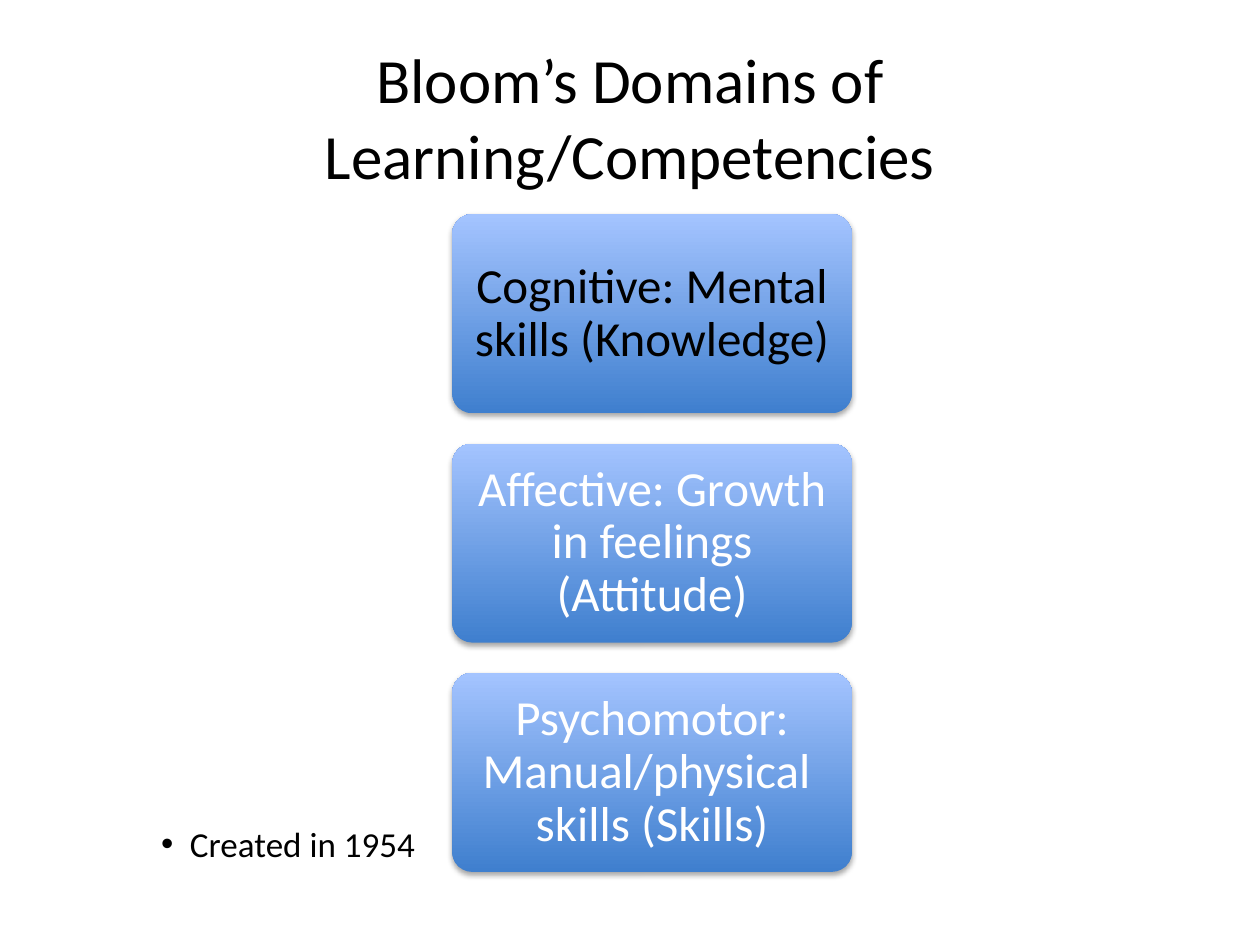
import pptx
import pptx.util
import pptx.dml.color
import pptx.enum.shapes
import pptx.enum.text
import pptx.oxml
import pptx.oxml.ns

COLORS = {"text": "000000", "light": "FFFFFF", "bottom": "3F7FCE", "top": "A4C4FF", "shadow": "000000"}
COLUMNS, ROWS = 100, 75
ALIGN = pptx.enum.text.PP_ALIGN
ANCHOR = pptx.enum.text.MSO_ANCHOR


def rgb(name):
    return pptx.dml.color.RGBColor.from_string(COLORS[name])


def write(frame, text, size, color="text", align=ALIGN.LEFT, anchor=ANCHOR.TOP, spacing=None, inset=None):
    frame.word_wrap = True
    frame.auto_size = pptx.enum.text.MSO_AUTO_SIZE.NONE
    frame.vertical_anchor = anchor
    if inset is not None:
        frame.margin_left = frame.margin_right = pptx.util.Inches(inset)
        frame.margin_top = frame.margin_bottom = pptx.util.Inches(inset)
    para = frame.paragraphs[0]
    para.alignment = align
    para.line_spacing = spacing
    span = para.add_run()
    span.text = text
    span.font.name = "Calibri"
    span.font.size = pptx.util.Pt(size)
    span.font.color.rgb = rgb(color)
    return para


class DomainSlide:
    def __init__(self, deck):
        self.deck = deck
        self.page = deck.slides.add_slide(deck.slide_layouts.get_by_name("Title Only"))

    def place(self, column, row, columns, rows):
        unit_x = self.deck.slide_width / COLUMNS
        unit_y = self.deck.slide_height / ROWS
        return [round(n) for n in (column * unit_x, row * unit_y, columns * unit_x, rows * unit_y)]

    def title(self, text, *area):
        box = self.page.shapes.title
        box.left, box.top, box.width, box.height = self.place(*area)
        write(box.text_frame, text, 36, align=ALIGN.CENTER, anchor=ANCHOR.MIDDLE)

    def card(self, text, color, *area):
        box = self.page.shapes.add_shape(
            pptx.enum.shapes.MSO_SHAPE.ROUNDED_RECTANGLE, *self.place(*area))
        box.adjustments[0] = 0.1
        box.fill.gradient()
        box.fill.gradient_angle = 90
        for stop, name in zip(box.fill.gradient_stops, ("bottom", "top")):
            stop.color.rgb = rgb(name)
        box.line.fill.background()
        self.drop_shadow(box)
        write(box.text_frame, text, 28, color=color, align=ALIGN.CENTER,
              anchor=ANCHOR.MIDDLE, spacing=0.9, inset=0.02)

    def drop_shadow(self, box):
        box.shadow.inherit = False
        effects = box._element.spPr.find(pptx.oxml.ns.qn("a:effectLst"))
        effects.append(pptx.oxml.parse_xml(
            f'<a:outerShdw {pptx.oxml.ns.nsdecls("a")} blurRad="{pptx.util.Pt(3.1)}" '
            f'dist="{pptx.util.Pt(1.8)}" dir="5400000" rotWithShape="0">'
            f'<a:srgbClr val="{COLORS["shadow"]}"><a:alpha val="35000"/></a:srgbClr></a:outerShdw>'))

    def bullet(self, text, *area):
        box = self.page.shapes.add_textbox(*self.place(*area))
        para = write(box.text_frame, text, 20)
        properties = para._p.get_or_add_pPr()
        indent = pptx.util.Inches(0.23)
        properties.set("marL", str(indent))
        properties.set("indent", str(-indent))
        for tag in ('a:buFont %s typeface="Arial"', 'a:buChar %s char="•"'):
            properties.append(pptx.oxml.parse_xml(f'<{tag % pptx.oxml.ns.nsdecls("a")}/>'))


def main():
    deck = pptx.Presentation()
    deck.slide_width = pptx.util.Inches(10)
    deck.slide_height = pptx.util.Inches(7.5)
    slide = DomainSlide(deck)
    slide.title("Bloom’s Domains of Learning/Competencies", 5, 3, 90, 12.5)
    domains = [
        ("Cognitive: Mental skills (Knowledge)", "text"),
        ("Affective: Growth in feelings (Attitude)", "light"),
        ("Psychomotor: Manual/physical  skills (Skills)", "light"),
    ]
    for index, (text, color) in enumerate(domains):
        slide.card(text, color, 35.9, 17 + index * 18.2, 31.7, 15.8)
    slide.bullet("Created in 1954", 11.8, 64.8, 30.3, 10.2)
    deck.save("out.pptx")


if __name__ == "__main__":
    main()
